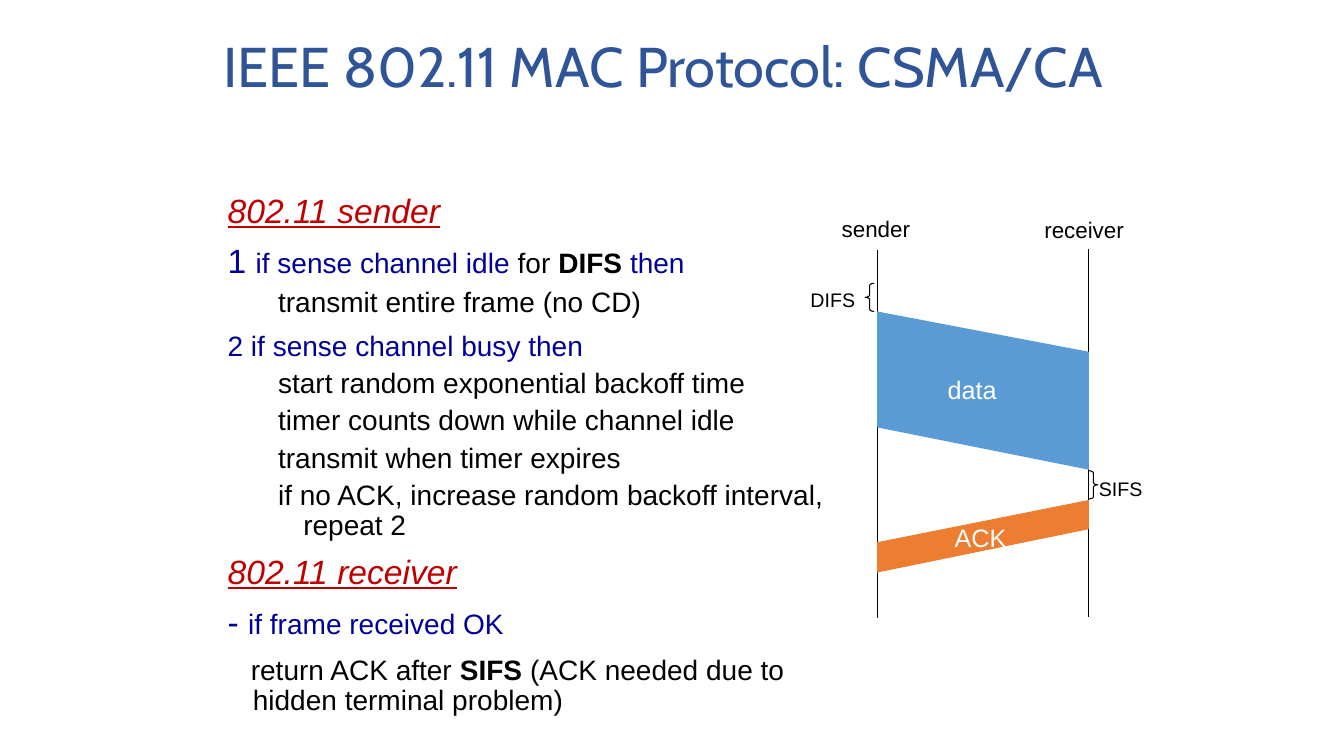
from pptx import Presentation
from pptx.dml.color import RGBColor
from pptx.enum.shapes import MSO_CONNECTOR, MSO_SHAPE
from pptx.enum.text import MSO_ANCHOR, MSO_AUTO_SIZE
from pptx.oxml.ns import qn
from pptx.util import Inches, Pt
from lxml import etree

BLACK = RGBColor(0x00, 0x00, 0x00)
WHITE = RGBColor(0xFF, 0xFF, 0xFF)
TITLE = RGBColor(0x2F, 0x54, 0x97)
RED = RGBColor(0xC0, 0x00, 0x00)
NAVY = RGBColor(0x00, 0x00, 0x99)
BLUE = RGBColor(0x5B, 0x9B, 0xD5)
ORANGE = RGBColor(0xED, 0x7D, 0x31)


class Board:
    """Style and drawing methods for one slide."""
    font = "Arial"
    thin = Pt(0.75)

    def __init__(self, slide):
        self.slide = slide
        self.shapes = slide.shapes

    def group(self):
        self.shapes = self.slide.shapes.add_group_shape().shapes

    def run(self, para, text, size, color, bold=False, head=False, font=None):
        run = para.add_run()
        run.text = text
        face = run.font
        face.name = font or self.font
        face.size = Pt(size)
        face.color.rgb = color
        face.bold = bold
        face.italic = face.underline = head

    def box(self, x, y, w, h, wrap=True):
        shape = self.shapes.add_textbox(Inches(x), Inches(y), Inches(w), Inches(h))
        frame = shape.text_frame
        frame.word_wrap = wrap
        frame.auto_size = MSO_AUTO_SIZE.NONE if wrap else MSO_AUTO_SIZE.SHAPE_TO_FIT_TEXT
        return frame

    def label(self, text, x, y, w, h, size, color=BLACK):
        frame = self.box(x, y, w, h, wrap=False)
        self.run(frame.paragraphs[0], text, size, color)

    def title(self, text, x, y, w, h):
        frame = self.box(x, y, w, h)
        frame.vertical_anchor = MSO_ANCHOR.MIDDLE
        para = frame.paragraphs[0]
        para.line_spacing = 0.9
        self.run(para, text, 40, TITLE, font="Cabin")

    def body(self, items, x, y, w, h):
        frame = self.box(x, y, w, h)
        for i, (level, hang, runs) in enumerate(items):
            para = frame.add_paragraph() if i else frame.paragraphs[0]
            para.level = level
            para.line_spacing = 0.9
            if i:
                para.space_before = Pt(5 if level else 10)
            props = para._p.get_or_add_pPr()
            props.set("marL", str(Inches(0.25 + 0.5 * level)))
            props.set("indent", str(Inches(-hang)))
            for run in runs:
                self.run(para, *run)

    def line(self, x, top, end):
        line = self.shapes.add_connector(
            MSO_CONNECTOR.STRAIGHT, Inches(x), Inches(top), Inches(x), Inches(end))
        line.line.color.rgb = BLACK
        line.line.width = self.thin
        etree.SubElement(line._element.spPr, qn("a:effectLst"))

    def brace(self, kind, x, y):
        shape = self.shapes.add_shape(
            kind, Inches(x), Inches(y), Inches(0.09), Inches(0.28))
        shape.adjustments[0] = 0.25
        shape.shadow.inherit = False
        shape.fill.background()
        shape.line.color.rgb = BLACK
        shape.line.width = self.thin

    def band(self, points, color):
        first, *rest = [(Inches(x), Inches(y)) for x, y in points]
        build = self.shapes.build_freeform(*first)
        build.add_line_segments(rest, close=True)
        shape = build.convert_to_shape()
        shape.shadow.inherit = False
        shape.fill.solid()
        shape.fill.fore_color.rgb = color
        shape.line.fill.background()


def head(text):
    return 0, 0.25, [(text, 24, RED, False, True)]


def item(*runs):
    return 0, 0.25, runs


def step(text):
    return 1, 0.25, [(text, 20, BLACK)]


def main():
    deck = Presentation()
    deck.slide_width, deck.slide_height = Inches(13.33), Inches(7.5)
    board = Board(deck.slides.add_slide(deck.slide_layouts[6]))

    # Title and protocol rules
    board.title("IEEE 802.11 MAC Protocol: CSMA/CA", 2.12, 0.17, 8.99, 1.04)
    board.body([
        head("802.11 sender"),
        item(("1 ", 24, NAVY), ("if sense channel idle", 20, NAVY),
             (" for ", 20, BLACK), ("DIFS ", 20, BLACK, True), ("then", 20, NAVY)),
        step("transmit entire frame (no CD)"),
        item(("2 if sense channel busy then", 20, NAVY)),
        step("start random exponential backoff time"),
        step("timer counts down while channel idle"),
        step("transmit when timer expires"),
        step("if no ACK, increase random backoff interval, repeat 2"),
        head("802.11 receiver"),
        item(("- ", 24, NAVY), ("if frame received OK", 20, NAVY)),
        (0, 0.02, [("return ACK after ", 20, BLACK), ("SIFS ", 20, BLACK, True),
                   ("(ACK needed due to hidden terminal problem)", 20, BLACK)]),
    ], 2.16, 1.88, 6.16, 5.42)

    # Time lines
    left, right = 8.7, 10.8
    board.line(left, 2.48, 6.13)
    board.line(right, 2.47, 6.12)
    board.label("sender", 8.25, 2.09, 0.91, 0.37, 16)
    board.label("receiver", 10.26, 2.1, 1, 0.37, 16)

    # Data frame after DIFS
    board.group()
    board.brace(MSO_SHAPE.LEFT_BRACE, 8.58, 2.81)
    board.label("DIFS", 7.94, 2.81, 0.65, 0.34, 14)
    board.band([(left, 3.09), (right, 3.49), (right, 4.66), (left, 4.24)], BLUE)
    board.label("data", 9.3, 3.66, 0.69, 0.4, 18, WHITE)

    # Acknowledgement after SIFS
    board.group()
    board.label("SIFS", right, 4.68, 0.64, 0.34, 14)
    board.brace(MSO_SHAPE.RIGHT_BRACE, right, 4.67)
    board.band([(left, 5.68), (right, 5.25), (right, 4.96), (left, 5.38)], ORANGE)
    board.label("ACK", 9.37, 5.13, 0.72, 0.4, 18, WHITE)

    deck.save("out.pptx")


if __name__ == "__main__":
    main()
